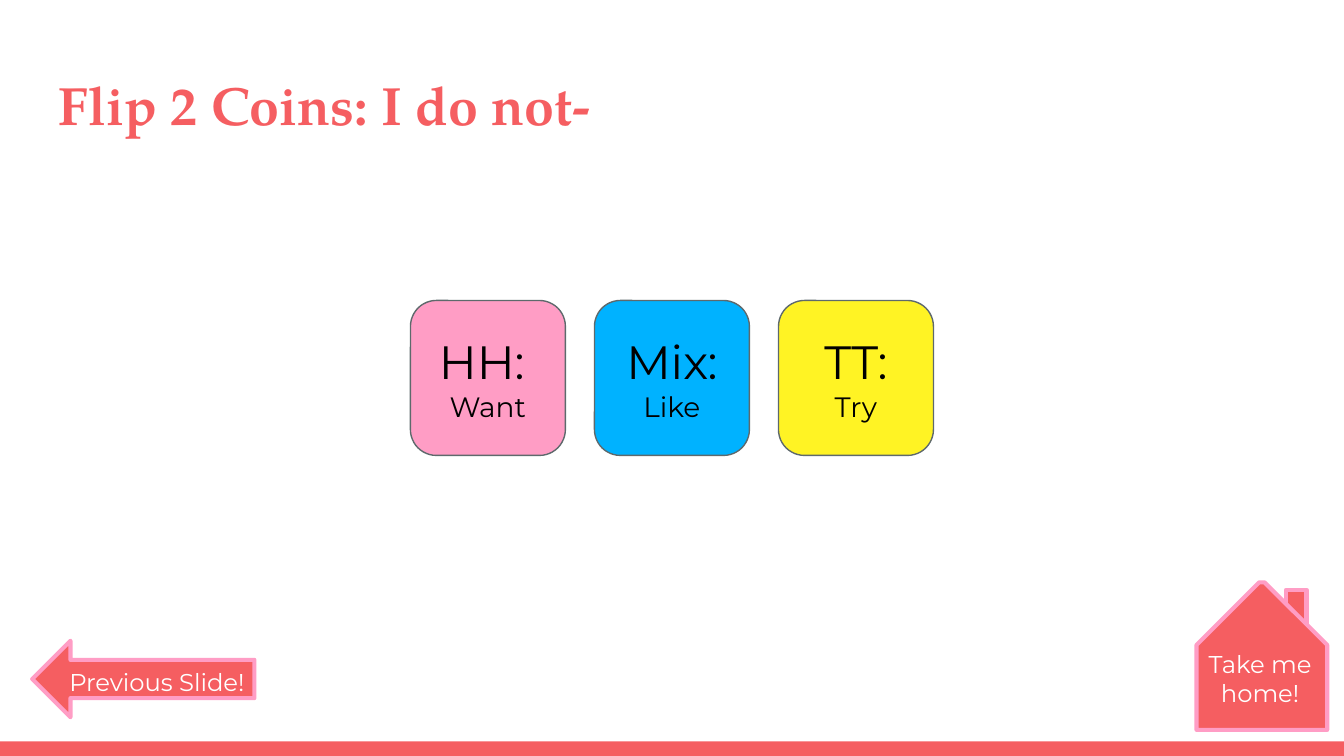
from pptx import Presentation
from pptx.dml.color import RGBColor
from pptx.enum.shapes import MSO_SHAPE
from pptx.enum.text import MSO_ANCHOR, PP_ALIGN
from pptx.util import Pt

RECT = MSO_SHAPE.RECTANGLE
ROUNDED = MSO_SHAPE.ROUNDED_RECTANGLE
ROOF = MSO_SHAPE.SNIP_2_SAME_RECTANGLE
ARROW = MSO_SHAPE.LEFT_ARROW
LEFT, CENTER = PP_ALIGN.LEFT, PP_ALIGN.CENTER
TOP, MIDDLE = MSO_ANCHOR.TOP, MSO_ANCHOR.MIDDLE


def color(hex_code):
    return RGBColor.from_string(hex_code)


class SlideBuilder:
    SERIF, SANS = "TeX Gyre Pagella", "Montserrat"
    CORAL, PINK, GREY = "F55E61", "FF9DC5", "5E696C"
    BLACK, WHITE = "000000", "FFFFFF"

    def __init__(self, slide):
        self.s = slide

    def shape(self, kind, x, y, w, h, fill, line=None, weight=2.25, adj=()):
        sp = self.s.shapes.add_shape(kind, Pt(x), Pt(y), Pt(w), Pt(h))
        sp.shadow.inherit = False
        sp.fill.solid()
        sp.fill.fore_color.rgb = color(fill)
        if line:
            sp.line.color.rgb = color(line)
            sp.line.width = Pt(weight)
        else:
            sp.line.fill.background()
        for i, value in enumerate(adj):
            sp.adjustments[i] = value
        return sp

    def set_text(self, sp, lines, sizes, hex_code, font, align=CENTER,
                 anchor=TOP, bold=False):
        tf = sp.text_frame
        tf.text = "\n".join(lines)
        tf.word_wrap = True
        tf.vertical_anchor = anchor
        tf.margin_left = tf.margin_right = Pt(7.2)
        tf.margin_top = tf.margin_bottom = Pt(7.2)
        for p, size in zip(tf.paragraphs, sizes):
            p.alignment = align
            for r in p.runs:
                r.font.name = font
                r.font.size = Pt(size)
                r.font.bold = bold
                r.font.color.rgb = color(hex_code)

    def text(self, x, y, w, h, content, size, hex_code, font, **style):
        sp = self.s.shapes.add_textbox(Pt(x), Pt(y), Pt(w), Pt(h))
        self.set_text(sp, [content], [size], hex_code, font, **style)

    def card(self, x, y, side, fill, lines):
        sp = self.shape(ROUNDED, x, y, side, side, fill, self.GREY, 0.75,
                        adj=[0.167])
        self.set_text(sp, lines, [25, 15], self.BLACK, self.SANS,
                      anchor=MIDDLE)

    def label(self, x, y, w, h, content):
        self.text(x, y, w, h, content, 13, self.WHITE, self.SANS)


def main():
    prs = Presentation()
    prs.slide_width, prs.slide_height = Pt(720), Pt(405)
    b = SlideBuilder(prs.slides.add_slide(prs.slide_layouts[6]))

    # Footer bar and title
    b.shape(RECT, 0, 397.2, 720, 7.8, b.CORAL)
    b.text(24.5, 31, 671, 49, "Flip 2 Coins: I do not-", 28.8, b.CORAL,
           b.SERIF, align=LEFT, bold=True)

    # Coin result cards, centred as a row
    cards = [
        (b.PINK, ["HH: ", "Want"]),
        ("00B2FF", ["Mix:", "Like"]),
        ("FFF324", ["TT:", "Try"]),
    ]
    side, pitch = 83, 98.6
    first = (720 - side - pitch * (len(cards) - 1)) / 2
    for i, (fill, lines) in enumerate(cards):
        b.card(first + i * pitch, 161, side, fill, lines)

    # Home button: chimney, house, label
    b.shape(RECT, 689, 316, 11, 29, b.CORAL, b.PINK)
    b.shape(ROOF, 641, 312, 70, 79, b.CORAL, b.PINK, adj=[0.479, 0])
    b.label(640, 340.5, 70, 49, "Take me home!")

    # Previous slide button
    b.shape(ARROW, 17.3, 343.3, 119, 41, b.CORAL, b.PINK, adj=[0.5, 0.5])
    b.label(24.5, 350, 119, 22.3, "Previous Slide!")

    prs.save("out.pptx")


if __name__ == "__main__":
    main()
